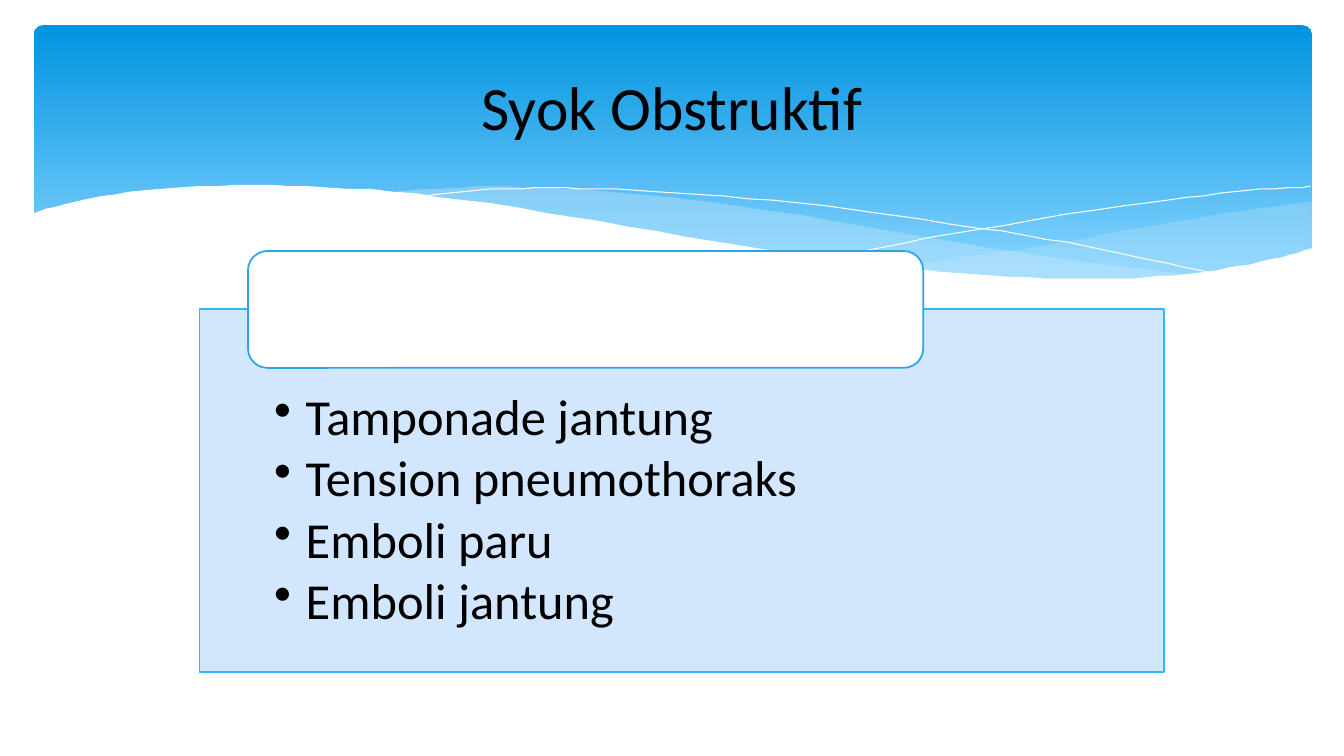
from lxml import etree
from pptx import Presentation
from pptx.dml.color import RGBColor
from pptx.enum.shapes import MSO_SHAPE
from pptx.enum.text import MSO_ANCHOR, PP_ALIGN
from pptx.oxml.ns import qn
from pptx.util import Pt

RECT, ROUND = MSO_SHAPE.RECTANGLE, MSO_SHAPE.ROUNDED_RECTANGLE
TOP, MIDDLE = MSO_ANCHOR.TOP, MSO_ANCHOR.MIDDLE
LEFT, CENTER = PP_ALIGN.LEFT, PP_ALIGN.CENTER

BLACK = RGBColor(0x00, 0x00, 0x00)
WHITE = RGBColor(0xFF, 0xFF, 0xFF)
DEEP_BLUE = RGBColor(0x02, 0x93, 0xE0)
SKY_BLUE = RGBColor(0x83, 0xD3, 0xFE)
PALE_BLUE = RGBColor(0xC6, 0xE7, 0xFC)
PANEL_BLUE = RGBColor(0xCE, 0xE5, 0xFE)
PANEL_EDGE = RGBColor(0x31, 0xB6, 0xFD)
TAB_EDGE = RGBColor(0x2C, 0xA5, 0xE6)

# Knots of the header curves, in points
RIGHT_TOP = [(936.7, 144), (897.1, 149), (855.4, 155.5), (825.8, 160.6),
             (772.6, 170.6), (723.6, 178.6), (677.5, 185), (635, 190.8)]
RIGHT_BOTTOM = [(635, 190.8), (676.8, 195.1), (726.5, 198.7), (771.1, 200.2),
                (810.7, 199.4), (845.3, 196.6), (877, 192.2), (905, 186.5),
                (936.7, 177.8)]
MIDDLE_TOP = [(275, 137.5), (314.6, 134.6), (347, 133.2), (383, 133.9),
              (424.1, 136.1), (469.4, 139.7), (519.1, 146.2), (574.6, 154.1),
              (641.5, 166.3), (712.1, 177.8), (774.7, 187.2), (830.9, 193.7),
              (856.8, 196.6)]
MIDDLE_BOTTOM = [(856.8, 196.6), (823, 199.4), (774.7, 200.2), (718.6, 198.7),
                 (666.7, 194.4), (609.1, 187.9), (543.6, 178.6), (470.9, 167),
                 (409.7, 155.5), (347.8, 146.2), (275, 137.5)]
FALLING_LINE = [(296.6, 140.4), (329.8, 136.8), (371.5, 134.6), (415.4, 134.6),
                (469.4, 136.8), (534.2, 141.8), (610.6, 149.8), (698.4, 162.7),
                (763.2, 173.5), (833.8, 187.9), (871.2, 195.8)]
RISING_LINE = [(589, 185), (645.1, 173.5), (717.8, 160.6), (802.8, 146.9),
               (859.7, 139.7), (900, 135.4), (936, 133.2)]
WHITE_EDGE = [(22.3, 153.4), (38.9, 147.6), (72.7, 140.4), (113.8, 134.6),
              (169.2, 132.5), (220.3, 133.2), (280.8, 136.8), (349.9, 145.4),
              (429.1, 158.4), (508.3, 172.1), (578.9, 182.9), (641.5, 190.8),
              (697.7, 195.8), (746.6, 198.7), (789.8, 199.4), (828.7, 197.3),
              (862.6, 193.7), (892.8, 188.6), (920.9, 182.2), (938.2, 177.1)]
WHITE_BASE = [(938.2, 236.9), (22.3, 236.9)]


def smooth(knots, steps=4):
    """Return points on a Catmull-Rom curve through the knots."""
    padded = [knots[0], *knots, knots[-1]]
    points = [knots[0]]
    for a, b, c, d in zip(padded, padded[1:], padded[2:], padded[3:]):
        for step in range(1, steps + 1):
            t = step / steps
            points.append(tuple(
                (2 * q + (r - p) * t + (2 * p - 5 * q + 4 * r - s) * t ** 2
                 + (3 * q - p - 3 * r + s) * t ** 3) / 2
                for p, q, r, s in zip(a, b, c, d)))
    return points


class SlideBuilder:
    font = {"name": "Calibri"}

    def __init__(self, prs):
        self.s = prs.slides.add_slide(prs.slide_layouts[6])

    def paint(self, sp, fill=None, line=None, width=1.25, alpha=None):
        sp.shadow.inherit = False
        if fill is None:
            sp.fill.background()
        else:
            sp.fill.solid()
            sp.fill.fore_color.rgb = fill
        if alpha is not None:
            color = sp._element.spPr.find(qn("a:solidFill")).find(qn("a:srgbClr"))
            etree.SubElement(color, qn("a:alpha"), val=str(alpha * 1000))
        if line is None:
            sp.line.fill.background()
        else:
            sp.line.color.rgb = line
            sp.line.width = Pt(width)

    def box(self, kind, at, **style):
        sp = self.s.shapes.add_shape(kind, *map(Pt, at))
        self.paint(sp, **style)
        return sp

    def gradient_box(self, at, corner, stops):
        sp = self.box(ROUND, at)
        sp.adjustments[0] = corner
        sp.fill.gradient()
        sp.fill.gradient_angle = 270
        for stop, (position, color) in zip(sp.fill.gradient_stops, stops):
            stop.position = position
            stop.color.rgb = color

    def curve(self, points, closed=True, **style):
        builder = self.s.shapes.build_freeform(*points[0], scale=Pt(1))
        builder.add_line_segments(points[1:], close=closed)
        self.paint(builder.convert_to_shape(), **style)

    def text_box(self, at, lines, size, **style):
        sp = self.s.shapes.add_textbox(*map(Pt, at))
        self.fill_text(sp, lines, size, **style)

    def fill_text(self, sp, lines, size, frame, paragraph, bullet_indent=None):
        tf = sp.text_frame
        for name, value in {"word_wrap": True, **frame}.items():
            setattr(tf, name, value)
        for i, line in enumerate(lines):
            p = tf.paragraphs[0] if i == 0 else tf.add_paragraph()
            for name, value in paragraph.items():
                setattr(p, name, value)
            if bullet_indent:
                pPr = p._p.get_or_add_pPr()
                pPr.set("marL", str(Pt(bullet_indent)))
                pPr.set("indent", str(-Pt(bullet_indent)))
                etree.SubElement(pPr, qn("a:buChar"), char="•")
            r = p.add_run()
            r.text = line
            for name, value in {**self.font, "size": Pt(size)}.items():
                setattr(r.font, name, value)
            r.font.color.rgb = BLACK


def main():
    prs = Presentation()
    prs.slide_width, prs.slide_height = Pt(960), Pt(540)
    slide = SlideBuilder(prs)

    # Header band with waves
    slide.gradient_box((24, 18, 913, 194.4), 0.034,
                       [(0, DEEP_BLUE), (0.9, SKY_BLUE)])
    slide.curve(smooth(RIGHT_TOP) + smooth(RIGHT_BOTTOM),
                fill=PALE_BLUE, alpha=29)
    slide.curve(smooth(MIDDLE_TOP) + smooth(MIDDLE_BOTTOM),
                fill=PALE_BLUE, alpha=40)
    for knots in (FALLING_LINE, RISING_LINE):
        slide.curve(smooth(knots), closed=False, line=WHITE, width=0)
    slide.curve(smooth(WHITE_EDGE) + WHITE_BASE, fill=WHITE)

    # Panel with the list of causes
    panel = slide.box(RECT, (142.6, 221, 689, 259.2),
                      fill=PANEL_BLUE, alpha=90, line=PANEL_EDGE)
    slide.fill_text(
        panel,
        ["Tamponade jantung", "Tension pneumothoraks",
         "Emboli paru", "Emboli jantung"], 36,
        frame={"vertical_anchor": TOP, "margin_left": Pt(53.3),
               "margin_right": Pt(53.3), "margin_top": Pt(59),
               "margin_bottom": Pt(20)},
        paragraph={"alignment": LEFT, "line_spacing": 0.9,
                   "space_after": Pt(5)},
        bullet_indent=22.5)

    # Empty tab on the panel
    slide.box(ROUND, (177.1, 179.3, 482.4, 83.5), fill=WHITE, line=TAB_EDGE)

    # Title
    slide.text_box((48, 26.6, 864, 98.6), ["Syok Obstruktif"], 44,
                   frame={"vertical_anchor": MIDDLE},
                   paragraph={"alignment": CENTER})

    prs.save("out.pptx")


if __name__ == "__main__":
    main()
